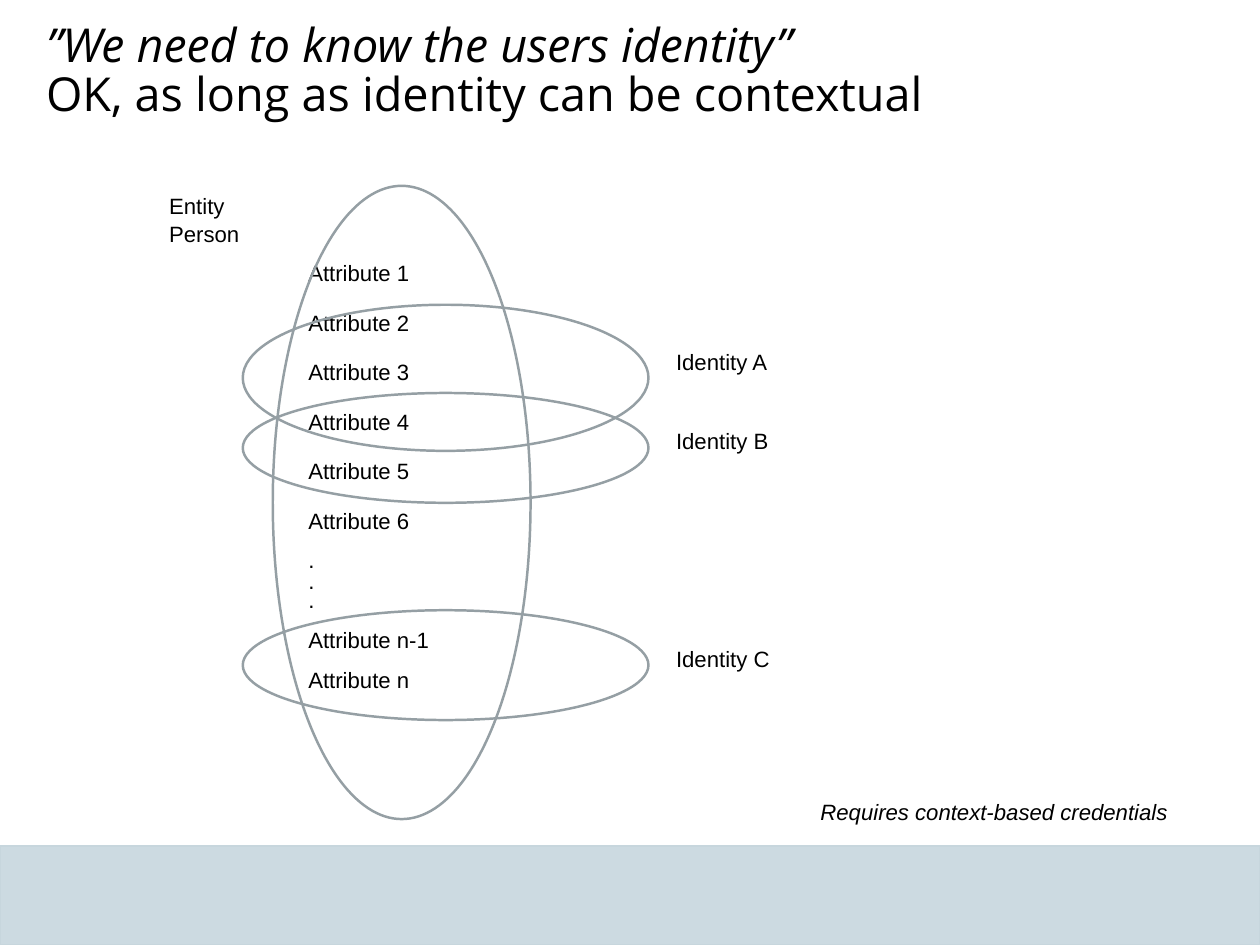
"""Build a slide on contextual identity: one person's attributes grouped into identities."""
from dataclasses import dataclass

from pptx import Presentation
from pptx.dml.color import RGBColor
from pptx.enum.shapes import MSO_SHAPE as Shape
from pptx.enum.text import MSO_ANCHOR as Anchor, PP_ALIGN as Align
from pptx.util import Cm, Pt


@dataclass(frozen=True)
class Theme:
    ink: RGBColor = RGBColor(0x00, 0x00, 0x00)
    outline: RGBColor = RGBColor(0x95, 0x9F, 0xA4)
    band: RGBColor = RGBColor(0xCC, 0xDA, 0xE1)
    band_edge: RGBColor = RGBColor(0xC7, 0xD6, 0xDD)
    title_font: str = "Open Sans"
    body_font: str = "Arial"
    title_size: float = 38
    body_size: float = 18


THEME = Theme()
SLIDE_WIDTH, SLIDE_HEIGHT = 36.12, 27.1
BAND_TOP = 24.26
INSET = 0.18

TITLE = [("”We need to know the users identity”", True),
         ("OK, as long as identity can be contextual", False)]
ENTITY = ["Entity", "Person"]
ATTRIBUTES = [f"Attribute {number}" for number in range(1, 7)]
LATER_ROWS = [(".", 15.49), (".", 16.1), (".", 16.64),
              ("Attribute n-1", 17.78), ("Attribute n", 18.92)]
IDENTITIES = [("Identity A", 9.8, 8.74, 4.19),
              ("Identity B", 12.09, 11.27, 3.15),
              ("Identity C", 18.34, 17.5, 3.15)]
CONCLUSION = "Requires context-based credentials"

ATTRIBUTE_LEFT, ATTRIBUTE_TOP, ATTRIBUTE_STEP = 8.66, 7.27, 1.42
IDENTITY_LEFT = 19.2
LABEL_WIDTH, LABEL_HEIGHT = 8.26, 1.09
ENTITY_OVAL = (7.82, 5.33, 7.39, 18.16)
IDENTITY_OVAL_LEFT, IDENTITY_OVAL_WIDTH = 6.96, 11.63


def add_text(page, lines, left, top, width=LABEL_WIDTH, height=LABEL_HEIGHT,
             font=THEME.body_font, size=THEME.body_size, spacing=1.0, gap=0, wrap=True):
    box = page.shapes.add_textbox(Cm(left), Cm(top), Cm(width), Cm(height))
    frame = box.text_frame
    frame.word_wrap = wrap
    frame.vertical_anchor = Anchor.TOP
    frame.margin_left = frame.margin_right = Cm(INSET)
    frame.margin_top = frame.margin_bottom = Cm(INSET)
    for index, (text, italic) in enumerate(lines):
        para = frame.add_paragraph() if index else frame.paragraphs[0]
        para.alignment = Align.LEFT
        para.line_spacing = spacing
        para.space_before = Pt(gap if index else 0)
        span = para.add_run()
        span.text = text
        span.font.name = font
        span.font.size = Pt(size)
        span.font.italic = italic
        span.font.color.rgb = THEME.ink


def add_outline(page, kind, bounds, color, weight, fill=None):
    shape = page.shapes.add_shape(kind, *map(Cm, bounds))
    shape.shadow.inherit = False
    if fill is None:
        shape.fill.background()
    else:
        shape.fill.solid()
        shape.fill.fore_color.rgb = fill
    shape.line.color.rgb = color
    shape.line.width = Pt(weight)


def main():
    deck = Presentation()
    deck.slide_width, deck.slide_height = Cm(SLIDE_WIDTH), Cm(SLIDE_HEIGHT)
    page = deck.slides.add_slide(deck.slide_layouts[6])

    band = (0, BAND_TOP, SLIDE_WIDTH, SLIDE_HEIGHT - BAND_TOP)
    add_outline(page, Shape.RECTANGLE, band, THEME.band_edge, 1, THEME.band)

    add_text(page, [(line, False) for line in ENTITY], 4.67, 5.33, height=1.83, gap=1)
    rows = [(name, ATTRIBUTE_TOP + index * ATTRIBUTE_STEP)
            for index, name in enumerate(ATTRIBUTES)]
    for name, top in rows + LATER_ROWS:
        add_text(page, [(name, False)], ATTRIBUTE_LEFT, top)

    add_outline(page, Shape.OVAL, ENTITY_OVAL, THEME.outline, 2)
    for name, label_top, oval_top, oval_height in IDENTITIES:
        oval = (IDENTITY_OVAL_LEFT, oval_top, IDENTITY_OVAL_WIDTH, oval_height)
        add_outline(page, Shape.OVAL, oval, THEME.outline, 2)
        add_text(page, [(name, False)], IDENTITY_LEFT, label_top)

    add_text(page, TITLE, 1.14, 0.48, 30.53, 3.61,
             THEME.title_font, THEME.title_size, spacing=0.88)
    add_text(page, [(CONCLUSION, True)], 23.34, 22.71, width=10.34, wrap=False)
    deck.save("out.pptx")


if __name__ == "__main__":
    main()
